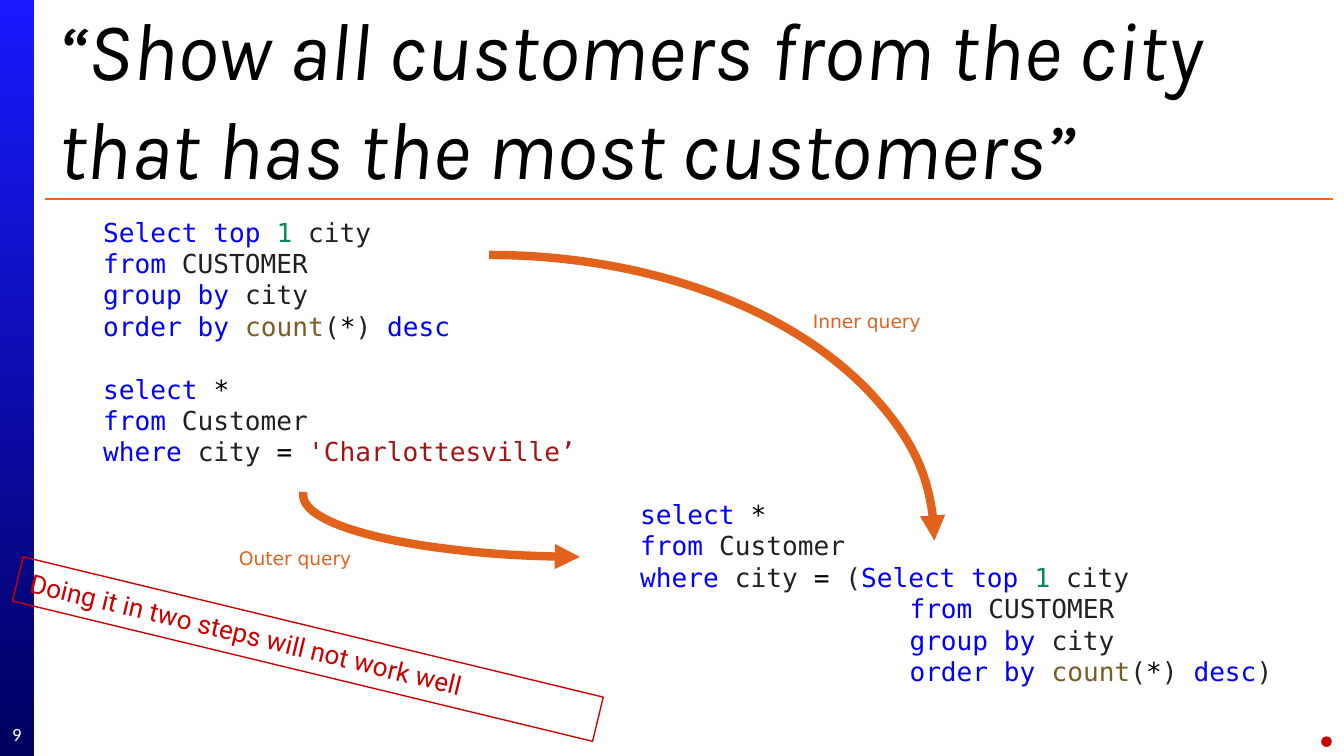
from lxml import etree
from pptx import Presentation
from pptx.dml.color import RGBColor
from pptx.enum.shapes import MSO_CONNECTOR, MSO_SHAPE
from pptx.enum.text import MSO_ANCHOR, PP_ALIGN
from pptx.oxml.ns import qn
from pptx.util import Cm, Pt

STRAIGHT = MSO_CONNECTOR.STRAIGHT
RECTANGLE, ARC, OVAL = MSO_SHAPE.RECTANGLE, MSO_SHAPE.ARC, MSO_SHAPE.OVAL
MIDDLE = MSO_ANCHOR.MIDDLE
LEFT, CENTER, RIGHT = PP_ALIGN.LEFT, PP_ALIGN.CENTER, PP_ALIGN.RIGHT

WHITE = RGBColor(0xFF, 0xFF, 0xFF)
BLACK = RGBColor(0x00, 0x00, 0x00)
BAR_TOP = RGBColor(0x19, 0x19, 0xFF)
BAR_BOTTOM = RGBColor(0x00, 0x00, 0x60)
RULE_ORANGE = RGBColor(0xFF, 0x66, 0x00)
ARROW_ORANGE = RGBColor(0xE3, 0x62, 0x1B)
RED = RGBColor(0xCC, 0x00, 0x00)
KEYWORD = RGBColor(0x00, 0x00, 0xFF)
NAME = RGBColor(0x21, 0x21, 0x21)
NUMBER = RGBColor(0x09, 0x88, 0x5A)
FUNCTION = RGBColor(0x79, 0x5E, 0x26)
STRING = RGBColor(0xA3, 0x15, 0x15)

CODE_PITCH = Pt(16.8)

TOP_CITY = [
    [("Select top ", KEYWORD), ("1", NUMBER), (" city", NAME)],
    [("from", KEYWORD), (" CUSTOMER", NAME)],
    [("group by", KEYWORD), (" city", NAME)],
    [("order by ", KEYWORD), ("count", FUNCTION), ("(", NAME), ("*", BLACK),
     (") ", NAME), ("desc", KEYWORD)],
]
CUSTOMERS = [
    [("select ", KEYWORD), ("*", BLACK)],
    [("from", KEYWORD), (" Customer", NAME)],
]
WHERE_CITY = [("where", KEYWORD), (" city ", NAME)]
CITY_LITERAL = WHERE_CITY + [("= ", BLACK), ("'Charlottesville’", STRING)]
CITY_SUBQUERY = WHERE_CITY + [("=", BLACK), (" (", NAME)] + TOP_CITY[0]
SUBQUERY_END = TOP_CITY[1:3] + [TOP_CITY[3] + [(")", NAME)]]

# Each block: left indent in cm, blank lines before it, lines
CODE_BLOCKS = [
    (0, 0, TOP_CITY),
    (0, 1, CUSTOMERS + [CITY_LITERAL]),
    (10.15, 1, CUSTOMERS + [CITY_SUBQUERY]),
    (15.24, 0, SUBQUERY_END),
]


def to_cm(box):
    return [Cm(length) for length in box]


def add_plain_shape(slide, kind, box, fill=None, line=None, width=0.75):
    shape = slide.shapes.add_shape(kind, *to_cm(box))
    shape.shadow.inherit = False
    if fill is None:
        shape.fill.background()
    else:
        shape.fill.solid()
        shape.fill.fore_color.rgb = fill
    if line is None:
        shape.line.fill.background()
    else:
        shape.line.color.rgb = line
        shape.line.width = Pt(width)
    return shape


def write_text(shape, text, font_name, size, color, alignment=LEFT, wrap=True):
    frame = shape.text_frame
    frame.word_wrap = wrap
    frame.text = text
    paragraph = frame.paragraphs[0]
    paragraph.alignment = alignment
    font = paragraph.font
    font.name, font.size, font.color.rgb = font_name, Pt(size), color
    return paragraph


def add_side_bar(slide, box):
    """Gradient strip with the slide number near its foot."""
    bar = add_plain_shape(slide, RECTANGLE, box)
    bar.fill.gradient()
    bar.fill.gradient_angle = 270
    for stop, color in zip(bar.fill.gradient_stops, (BAR_TOP, BAR_BOTTOM)):
        stop.color.rgb = color
    left, top, width, height = box
    number = slide.shapes.add_textbox(
        *to_cm((left, top + height - 0.8, width, 0.76)))
    frame = number.text_frame
    frame.margin_left = frame.margin_right = 0
    frame.margin_top = frame.margin_bottom = 0
    frame.vertical_anchor = MIDDLE
    write_text(number, "9", "Calibri", 10, WHITE, CENTER)


def add_title(slide, box):
    """Two-line title with a rule below it."""
    title = slide.shapes.add_textbox(*to_cm(box))
    title.text_frame.vertical_anchor = MIDDLE
    paragraph = write_text(
        title, "“Show all customers from the city\vthat has the most customers”",
        "Karla", 44, BLACK)
    paragraph.font.italic = True
    left, top, width, height = box
    rule_top = top + height + 0.23
    rule = slide.shapes.add_connector(
        STRAIGHT, *to_cm((left, rule_top, left + width, rule_top)))
    rule.line.color.rgb = RULE_ORANGE
    rule.line.width = Pt(0.75)
    etree.SubElement(rule.line._get_or_add_ln().getparent(), qn("a:effectLst"))


def add_code(slide, box):
    frame = slide.shapes.add_textbox(*to_cm(box)).text_frame
    frame.word_wrap = True
    paragraph = frame.paragraphs[0]
    for indent, blank_lines, lines in CODE_BLOCKS:
        for index, line in enumerate(lines):
            if paragraph.runs:
                paragraph = frame.add_paragraph()
            paragraph.line_spacing = CODE_PITCH
            if index == 0:
                paragraph.space_before = CODE_PITCH * blank_lines
            paragraph.font.name = "DejaVu Sans Mono"
            paragraph.font.size = Pt(14)
            paragraph._p.get_or_add_pPr().set("marL", str(Cm(indent)))
            for text, color in line:
                run = paragraph.add_run()
                run.text = text
                run.font.color.rgb = color


def add_curved_arrow(slide, box, start, end):
    arrow = add_plain_shape(slide, ARC, box, line=ARROW_ORANGE, width=4.5)
    arrow.adjustments[0] = start
    arrow.adjustments[1] = end
    etree.SubElement(arrow.line._get_or_add_ln(), qn("a:tailEnd"), type="triangle")
    return arrow


def add_arrow_label(slide, box, text):
    label = slide.shapes.add_textbox(*to_cm(box))
    write_text(label, text, "DejaVu Sans", 10, ARROW_ORANGE, RIGHT, wrap=False)


def add_warning(slide, box):
    warning = add_plain_shape(slide, RECTANGLE, box, line=RED)
    warning.rotation = 13.6
    write_text(warning, "Doing it in two steps will not work well",
               "Roboto", 14, RED)


def main():
    presentation = Presentation()
    presentation.slide_width, presentation.slide_height = Cm(25.4), Cm(14.29)
    slide = presentation.slides.add_slide(presentation.slide_layouts[6])

    add_side_bar(slide, (0, 0, 0.64, 14.29))
    add_title(slide, (0.85, 0.15, 24.34, 3.38))
    add_curved_arrow(slide, (0.85, 4.82, 16.81, 10.8), 161.93, 0)
    add_code(slide, (1.7, 3.96, 22.86, 9.25))
    outer_arrow = add_curved_arrow(slide, (9.96, 3.96, 2.34, 10.8), 161.63, 211.1)
    outer_arrow.rotation = 270
    outer_arrow._element.spPr.get_or_add_xfrm().set("flipH", "1")
    add_arrow_label(slide, (15.01, 5.74, 2.64, 0.69), "Inner query")
    add_arrow_label(slide, (4.22, 10.21, 2.67, 0.69), "Outer query")
    add_plain_shape(slide, OVAL, (24.97, 13.92, 0.2, 0.2), fill=RED)
    add_warning(slide, (0.18, 11.84, 11.28, 0.86))
    presentation.save("out.pptx")


if __name__ == "__main__":
    main()
